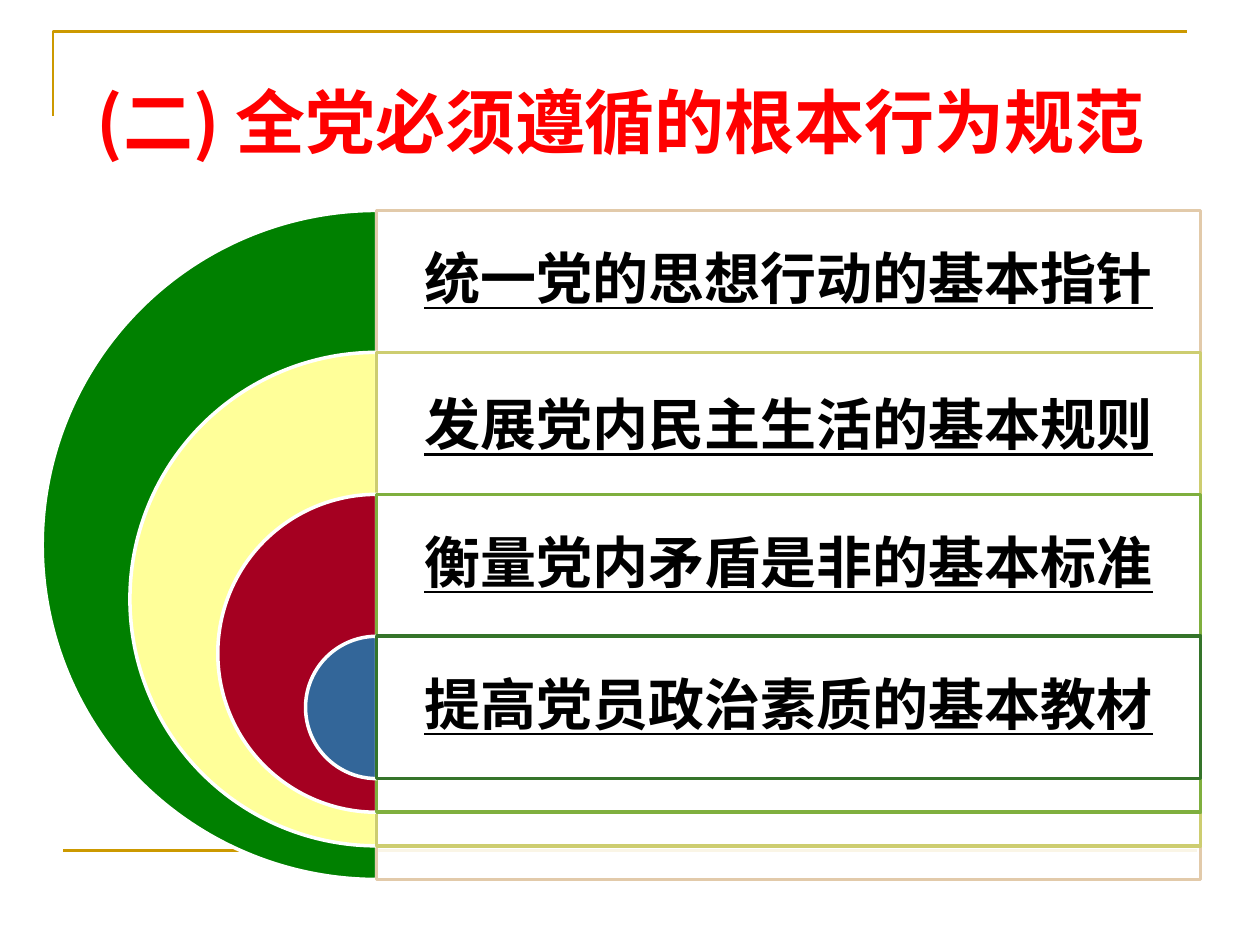
from pptx import Presentation
from pptx.dml.color import RGBColor
from pptx.enum.shapes import MSO_CONNECTOR, MSO_SHAPE
from pptx.enum.text import MSO_ANCHOR, MSO_AUTO_SIZE, PP_ALIGN
from pptx.oxml.ns import qn
from pptx.util import Inches, Pt
from lxml.etree import SubElement

# Content: text, half-disc colour, border colour, line spacing
TITLE = "(二) 全党必须遵循的根本行为规范"
ROWS = [
    ("统一党的思想行动的基本指针", "008000", "E2CAAA", 0.9),
    ("发展党内民主生活的基本规则", "FFFF99", "CDCD70", 1.0),
    ("衡量党内矛盾是非的基本标准", "A50021", "7FAF3E", 0.9),
    ("提高党员政治素质的基本教材", "336699", "35742A", 0.9),
]
THEME = {
    "font": "Noto Sans CJK SC",
    "title_size": 40, "row_size": 32,
    "title": "FF0000", "text": "000000", "rule": "CC9900", "white": "FFFFFF",
    "rule_width": 1.5, "border_width": 2,
}

# Geometry in inches
CENTER_X, TOP, PANEL_WIDTH = 2.99, 1.67, 6.54
LARGEST, ROW_HEIGHT = 5.31, 1.13
ROW_STEP = (5.05 - TOP) / (len(ROWS) - 1)
SIZE_STEP = (LARGEST - ROW_HEIGHT) / (len(ROWS) - 1)


def color(name):
    return RGBColor.from_string(name)


def write(shape, text, *, size, ink, underline=None, spacing=None, inset=0.1):
    frame = shape.text_frame
    frame.word_wrap = True
    frame.auto_size = MSO_AUTO_SIZE.NONE
    frame.vertical_anchor = MSO_ANCHOR.MIDDLE
    frame.margin_left = frame.margin_right = Inches(inset)
    para = frame.paragraphs[0]
    para.alignment = PP_ALIGN.CENTER
    para.line_spacing = spacing
    span = para.add_run()
    span.text = text
    font = span.font
    font.name, font.size, font.bold = THEME["font"], Pt(size), True
    font.underline = underline
    font.color.rgb = color(ink)
    SubElement(font._element, qn("a:ea"), typeface=THEME["font"])


def outline(shape, ink, width):
    shape.line.color.rgb = color(ink)
    shape.line.width = Pt(width)


def add_block(page, kind, left, top, width, height, fill, border, opacity=None):
    shape = page.shapes.add_shape(
        kind, Inches(left), Inches(top), Inches(width), Inches(height))
    shape.shadow.inherit = False
    shape.fill.solid()
    shape.fill.fore_color.rgb = color(fill)
    if opacity is not None:
        tint = shape.fill._xPr.find(qn("a:solidFill"))[0]
        SubElement(tint, qn("a:alpha"), val=str(opacity * 1000))
    outline(shape, border, THEME["border_width"])
    return shape


def add_rules(page):
    builder = page.shapes.build_freeform(Inches(0.42), Inches(0.92))
    builder.add_line_segments(
        [(Inches(0.42), Inches(0.25)), (Inches(9.42), Inches(0.25))], close=False)
    corner = builder.convert_to_shape()
    corner.shadow.inherit = False
    corner.fill.background()
    outline(corner, THEME["rule"], THEME["rule_width"])

    footer = page.shapes.add_connector(
        MSO_CONNECTOR.STRAIGHT, Inches(0.5), Inches(6.75), Inches(9.5), Inches(6.75))
    outline(footer, THEME["rule"], THEME["rule_width"])
    SubElement(footer._element.spPr, qn("a:effectLst"))


def add_title(page):
    title = page.shapes.title
    title.left, title.top = Inches(0.33), Inches(0.33)
    title.width, title.height = Inches(9.19), Inches(1.08)
    write(title, TITLE, size=THEME["title_size"], ink=THEME["title"],
          spacing=Pt(60))


def add_row(page, index, text, fill, border, spacing):
    top = TOP + index * ROW_STEP
    size = LARGEST - index * SIZE_STEP
    disc = add_block(page, MSO_SHAPE.PIE, CENTER_X - size / 2, top, size, size,
                     fill, THEME["white"])
    # Left half: from 90 to 270 degrees
    disc.adjustments[0], disc.adjustments[1] = 54, 162
    add_block(page, MSO_SHAPE.RECTANGLE, CENTER_X, top, PANEL_WIDTH, size,
              THEME["white"], border, opacity=90)
    box = page.shapes.add_textbox(
        Inches(CENTER_X), Inches(top), Inches(PANEL_WIDTH), Inches(ROW_HEIGHT))
    write(box, text, size=THEME["row_size"], ink=THEME["text"],
          underline=True, spacing=spacing, inset=0.13)


def main():
    deck = Presentation()
    deck.slide_width, deck.slide_height = Inches(10), Inches(7.5)
    page = deck.slides.add_slide(deck.slide_layouts[5])
    add_rules(page)
    add_title(page)
    for index, row in enumerate(ROWS):
        add_row(page, index, *row)
    deck.save("out.pptx")


if __name__ == "__main__":
    main()
